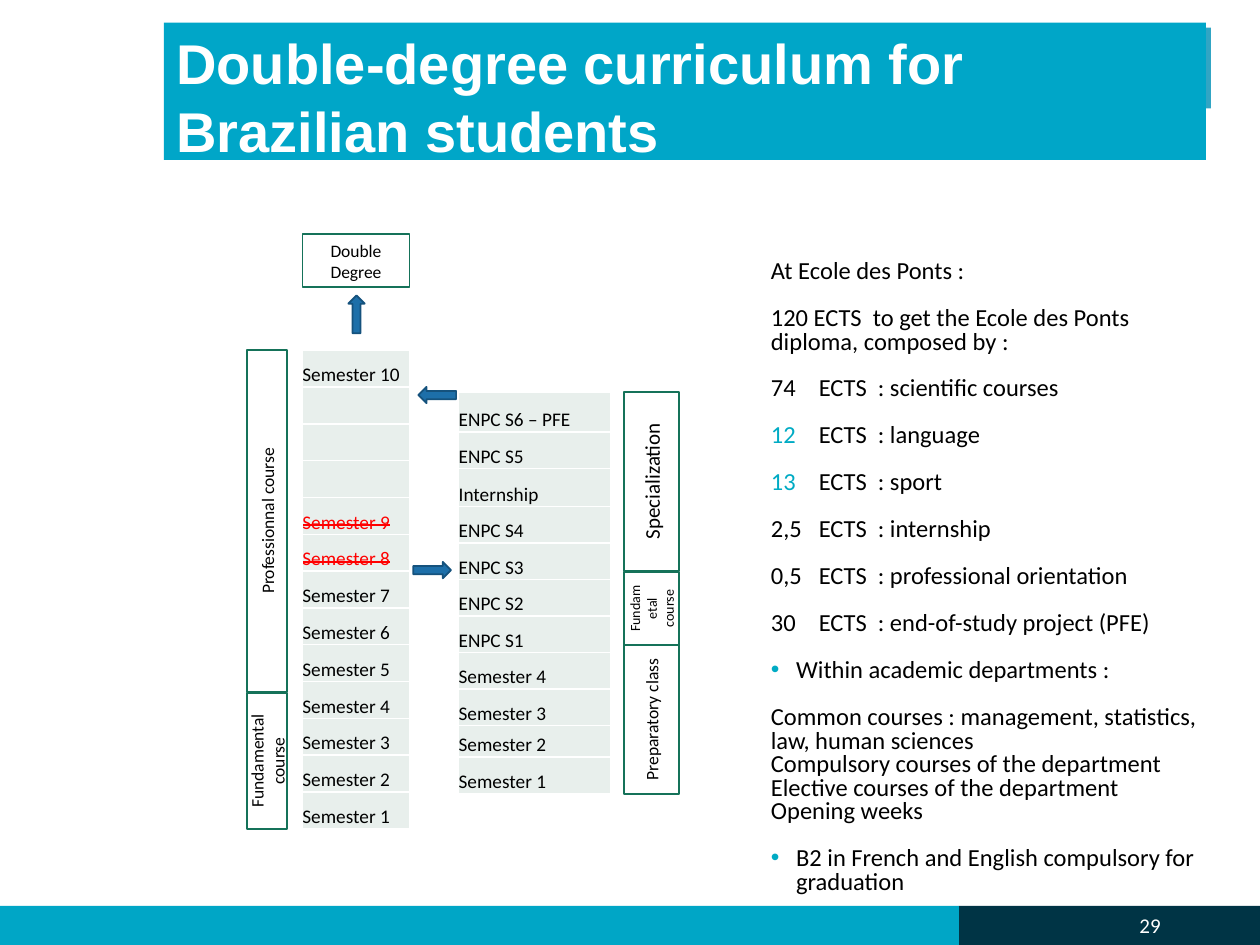
"""Build the double-degree curriculum slide."""
from lxml.etree import SubElement as Sub
from pptx import Presentation
from pptx.dml.color import RGBColor as Rgb
from pptx.enum.shapes import MSO_SHAPE as Shape
from pptx.enum.text import MSO_ANCHOR as Anchor, MSO_AUTO_SIZE as Auto, PP_ALIGN as Align
from pptx.oxml.ns import qn
from pptx.util import Inches, Pt

HUES = {
    "teal": "00A6C6", "title": "00A6C8", "back": "31A5C4", "navy": "003445",
    "white": "FFFFFF", "black": "000000", "red": "FF0000", "green": "157259",
    "cell": "E8EFEC", "blue": "1D6FA9", "edge": "15527D", "mark": "00ABC4",
}
BARS = [
    ("back", (1.56, 0.22, 8.05, 0.64)),
    ("navy", (7.61, 7.19, 2.39, 0.31)),
    ("teal", (0, 7.19, 7.61, 0.31)),
]
PHASES = [
    ("Fundamental course", (1.96, 5.5, 0.32, 1.08), 10),
    ("Professionnal course", (1.96, 2.78, 0.32, 2.71), 10),
    ("Preparatory class", (4.95, 5.12, 0.44, 1.18), 10),
    ("Fundametal course", (4.95, 4.54, 0.44, 0.58), 8),
    ("Specialization", (4.95, 3.11, 0.44, 1.42), 12),
]
ARROWS = [(3.28, 4.46, 0), (3.32, 3.07, 180), (2.68, 2.43, 270)]
HOME = ["Semester 10", "", "", ""] + [f"Semester {n}" for n in range(9, 0, -1)]
HOST = ["ENPC S6 – PFE", "ENPC S5", "Internship"]
HOST += [f"ENPC S{n}" for n in range(4, 0, -1)]
HOST += [f"Semester {n}" for n in range(4, 0, -1)]
STRUCK = ("Semester 9", "Semester 8")
GAP = 13.4
NOTES = [
    ("At Ecole des Ponts :", "", 0),
    ("120 ECTS  to get the Ecole des Ponts diploma, composed by :", "", GAP),
    ("74\tECTS  : scientific courses", "tab", GAP),
    ("ECTS  : language", "num", GAP),
    ("ECTS  : sport", "num", GAP),
    ("2,5\tECTS  : internship", "tab", GAP),
    ("0,5\tECTS  : professional orientation", "tab", GAP),
    ("30\tECTS  : end-of-study project (PFE)", "tab", GAP),
    ("Within academic departments :", "dot", GAP),
    ("Common courses : management, statistics, law, human sciences", "", GAP),
    ("Compulsory courses of the department", "", 0),
    ("Elective courses of the department", "", 0),
    ("Opening weeks", "", 0),
    ("B2 in French and English compulsory for graduation", "dot", GAP),
]


def rgb(hue):
    """Return the colour of a given name."""
    return Rgb.from_string(HUES[hue])


def assign(item, **form):
    """Set attributes from format values."""
    for key, value in form.items():
        setattr(item, key, value)


def write(para, text, size, hue="black", face="Calibri", bold=False):
    """Add one formatted run to a paragraph."""
    run = para.add_run()
    run.text = text
    assign(run.font, name=face, size=Pt(size), bold=bold)
    run.font.color.rgb = rgb(hue)
    return run


def add_box(slide, kind, place, fill=None, line=None):
    """Add a preset shape without a shadow."""
    box = slide.shapes.add_shape(kind, *map(Inches, place))
    box.shadow.inherit = False
    if fill:
        box.fill.solid()
        box.fill.fore_color.rgb = rgb(fill)
    else:
        box.fill.background()
    if line:
        box.line.color.rgb = rgb(line)
        box.line.width = Pt(1)
    else:
        box.line.fill.background()
    return box


def add_label(slide, text, place, size, turn=True):
    """Add an outlined label, reading upwards if turned."""
    frame = add_box(slide, Shape.RECTANGLE, place, line="green").text_frame
    assign(frame, word_wrap=True, vertical_anchor=Anchor.MIDDLE)
    if turn:
        frame._txBody.bodyPr.set("vert", "vert270")
    para = frame.paragraphs[0]
    para.alignment = Align.CENTER
    write(para, text, size)


def add_text(slide, place, anchor):
    """Add a wrapping text box and return its frame."""
    frame = slide.shapes.add_textbox(*map(Inches, place)).text_frame
    assign(frame, word_wrap=True, vertical_anchor=anchor)
    return frame


def fill_cell(cell, text):
    """Fill, frame and letter one table cell."""
    assign(cell, margin_left=0, margin_right=0, margin_top=0, margin_bottom=0,
           vertical_anchor=Anchor.BOTTOM)
    props = cell._tc.get_or_add_tcPr()
    for side in ("lnL", "lnR", "lnT", "lnB"):
        line = Sub(props, qn(f"a:{side}"), w=str(Pt(1)))
        Sub(Sub(line, qn("a:solidFill")), qn("a:srgbClr"), val=HUES["white"])
    cell.fill.solid()
    cell.fill.fore_color.rgb = rgb("cell")
    para = cell.text_frame.paragraphs[0]
    if not text:
        Sub(para._p, qn("a:endParaRPr"), sz="1100")
        return
    run = write(para, text, 11)
    if text in STRUCK and cell.text_frame:
        return run


def add_terms(slide, terms, place, highs, struck=()):
    """Add a one-column table of terms."""
    area = map(Inches, place)
    table = slide.shapes.add_table(len(terms), 1, *area).table
    assign(table, first_row=False, horz_banding=False)
    for row, (text, high) in enumerate(zip(terms, highs)):
        table.rows[row].height = Inches(high)
        run = fill_cell(table.cell(row, 0), text)
        if text in struck:
            run.font.color.rgb = rgb("red")
            run._r.get_or_add_rPr().set("strike", "sngStrike")


def mark(para, kind):
    """Give a paragraph its bullet, number or tab stop."""
    props = para._p.get_or_add_pPr()
    if kind == "tab":
        stops = Sub(props, qn("a:tabLst"))
        Sub(stops, qn("a:tab"), pos=str(Inches(0.38)), algn="l")
        return
    dent = Inches(0.38 if kind == "num" else 0.2)
    props.set("marL", str(dent))
    props.set("indent", str(-dent))
    Sub(Sub(props, qn("a:buClr")), qn("a:srgbClr"), val=HUES["mark"])
    if kind == "num":
        Sub(props, qn("a:buAutoNum"), type="arabicPlain", startAt="12")
    else:
        Sub(props, qn("a:buFont"), typeface="Arial")
        Sub(props, qn("a:buChar"), char="•")


def add_notes(slide):
    """Add the list of diploma rules."""
    frame = add_text(slide, (6.02, 2.02, 3.73, 4.7), Anchor.TOP)
    for row, (text, kind, gap) in enumerate(NOTES):
        para = frame.add_paragraph() if row else frame.paragraphs[0]
        if kind:
            mark(para, kind)
        assign(para, line_spacing=0.8, space_before=Pt(gap))
        write(para, text, 14)


def set_title(slide, text):
    """Place and format the title above its backdrop."""
    title = slide.shapes.title
    place = map(Inches, (1.3, 0.18, 8.27, 1.09))
    assign(title, **dict(zip(("left", "top", "width", "height"), place)))
    title.fill.solid()
    title.fill.fore_color.rgb = rgb("title")
    frame = title.text_frame
    assign(frame, word_wrap=True, auto_size=Auto.NONE, vertical_anchor=Anchor.TOP)
    para = frame.paragraphs[0]
    para.alignment = Align.LEFT
    write(para, text, 32, "white", "Arial", True)
    title.element.getparent().append(title.element)


def main():
    """Build and save the slide."""
    deck = Presentation()
    assign(deck, slide_width=Inches(10), slide_height=Inches(7.5))
    slide = deck.slides.add_slide(deck.slide_layouts[5])
    for hue, place in BARS:
        add_box(slide, Shape.RECTANGLE, place, hue)
    page = add_text(slide, (7.06, 7.14, 2.25, 0.4), Anchor.MIDDLE).paragraphs[0]
    page.alignment = Align.RIGHT
    write(page, "29", 12, "white")
    add_terms(slide, HOME, (2.4, 2.78, 0.85, 3.8), [3.8 / 13] * 13, STRUCK)
    for text, place, size in PHASES:
        add_label(slide, text, place, size)
    for left, top, turn in ARROWS:
        arrow = add_box(slide, Shape.RIGHT_ARROW, (left, top, 0.3, 0.13), "blue", "edge")
        arrow.rotation = turn
    add_label(slide, "Double Degree", (2.4, 1.86, 0.85, 0.42), 10, False)
    highs = [0.32, 0.29, 0.3] + [0.29] * 6 + [0.25, 0.29]
    add_terms(slide, HOST, (3.64, 3.11, 1.21, 3.19), highs)
    set_title(slide, "Double-degree curriculum for Brazilian students")
    add_notes(slide)
    deck.save("out.pptx")


if __name__ == "__main__":
    main()
